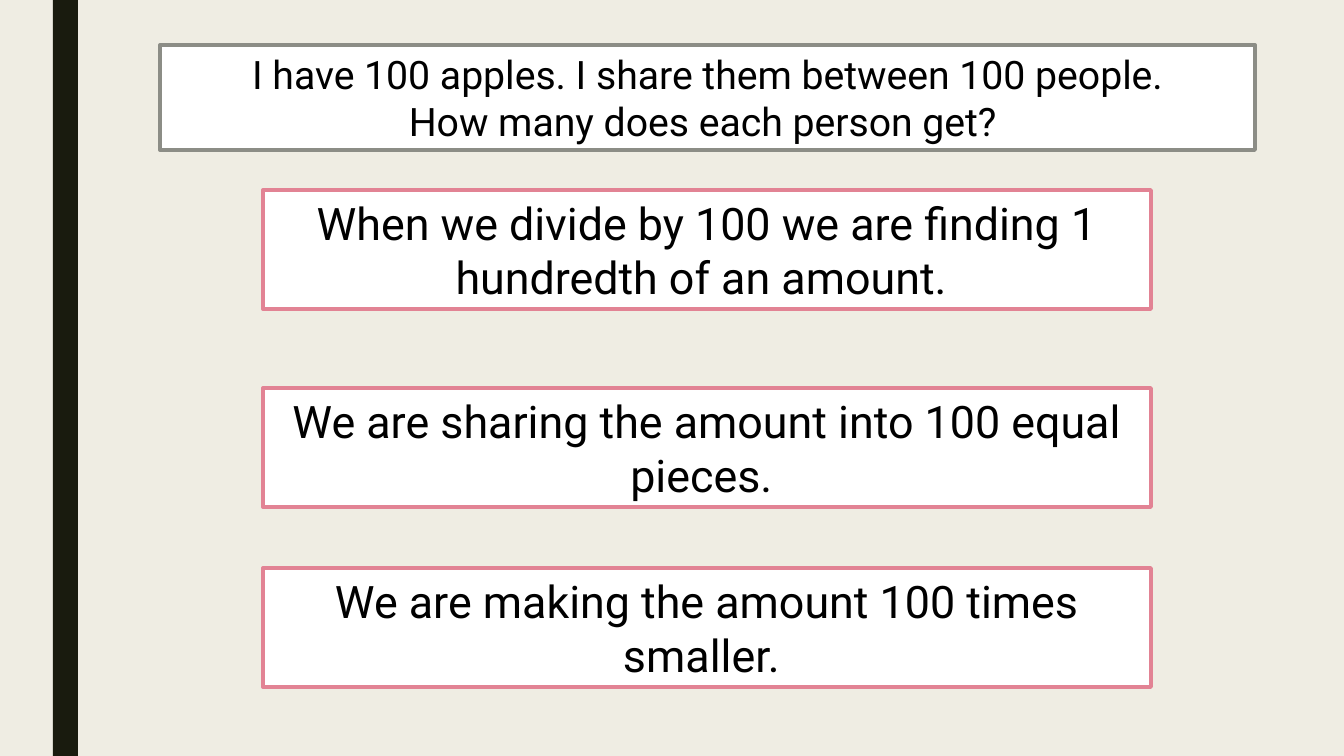
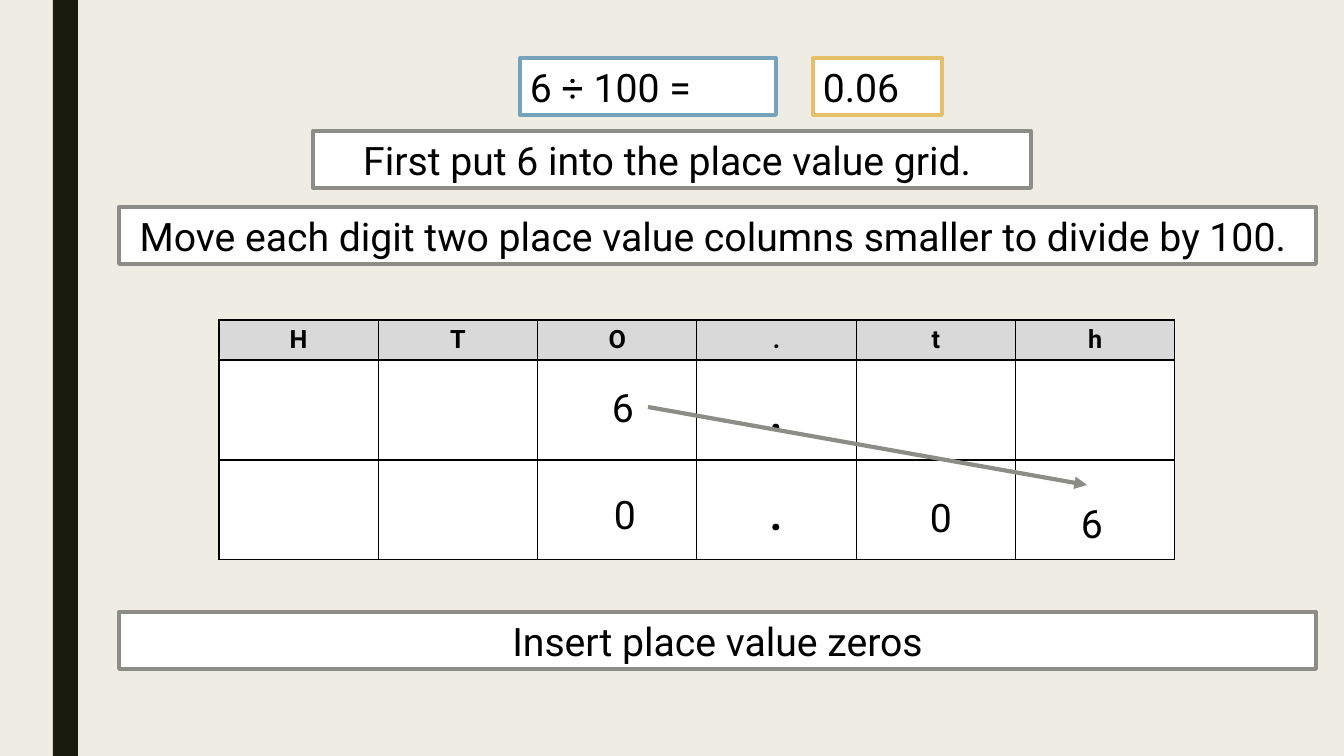
from lxml import etree
from pptx import Presentation
from pptx.dml.color import RGBColor
from pptx.enum.shapes import MSO_CONNECTOR, MSO_SHAPE
from pptx.enum.text import MSO_ANCHOR, PP_ALIGN
from pptx.oxml import parse_xml
from pptx.oxml.ns import nsdecls, qn
from pptx.util import Pt

PX = 914400 / 100.8
FONT = "Roboto"
RECTANGLE = MSO_SHAPE.RECTANGLE
STRAIGHT = MSO_CONNECTOR.STRAIGHT
MIDDLE, TOP = MSO_ANCHOR.MIDDLE, MSO_ANCHOR.TOP
LEFT, CENTER = PP_ALIGN.LEFT, PP_ALIGN.CENTER

CREAM = RGBColor(0xEF, 0xED, 0xE3)
DARK = RGBColor(0x19, 0x1B, 0x0E)
BLACK = RGBColor(0x00, 0x00, 0x00)
WHITE = RGBColor(0xFF, 0xFF, 0xFF)
HEADER_GRAY = RGBColor(0xD9, 0xD9, 0xD9)
GRAY = RGBColor(0x8C, 0x8D, 0x86)
PINK = RGBColor(0xE2, 0x83, 0x94)
BLUE = RGBColor(0x77, 0xA2, 0xBB)
GOLD = RGBColor(0xE6, 0xC0, 0x69)


def write_text(frame, text, size=28, bold=False, align=CENTER):
    """Fill a text frame, one paragraph for each line of text."""
    frame.word_wrap = True
    for number, line in enumerate(text.split("\n")):
        para = frame.paragraphs[0] if number == 0 else frame.add_paragraph()
        para.alignment = align
        span = para.add_run()
        span.text = line
        span.font.name = FONT
        span.font.size = Pt(size)
        span.font.bold = bold
        span.font.color.rgb = BLACK


def add_box(page, bounds, fill, outline=None):
    """Add a flat rectangle; bounds are left, top, width, height in px."""
    box = page.shapes.add_shape(RECTANGLE, *(round(n * PX) for n in bounds))
    box.shadow.inherit = False
    box.fill.solid()
    box.fill.fore_color.rgb = fill
    if outline is None:
        box.line.fill.background()
    else:
        box.line.color.rgb = outline
        box.line.width = Pt(2.75)
    return box


deck = Presentation()
deck.slide_width, deck.slide_height = round(1344 * PX), round(756 * PX)
master = deck.slide_master
blank = deck.slide_layouts[6]
sharing = deck.slides.add_slide(blank)
grid_page = deck.slides.add_slide(blank)

# Shared background and side band, kept on the master
master.background.fill.solid()
master.background.fill.fore_color.rgb = CREAM
band = add_box(sharing, (53, 0, 25, 756), DARK)
master.shapes.element.append(band.element)

# Slide 1: what dividing by 100 means
question = add_box(sharing, (160, 45, 1095, 105), WHITE, GRAY)
write_text(question.text_frame, "I have 100 apples. I share them between 100 people.\n"
           "How many does each person get? ")
for top, statement in (
    (190, "When we divide by 100 we are finding 1 hundredth of an amount. "),
    (388, "We are sharing the amount into 100 equal pieces. "),
    (568, "We are making the amount 100 times smaller. "),
):
    box = add_box(sharing, (263, top, 888, 119), WHITE, PINK)
    write_text(box.text_frame, statement, size=32)

# Slide 2: calculation, answer and steps
for left, top, width, outline, align, text in (
    (520, 58, 256, BLUE, LEFT, "6 ÷ 100 ="),
    (813, 58, 129, GOLD, LEFT, "0.06"),
    (313, 131, 718, GRAY, CENTER, "First put 6 into the place value grid. "),
    (119, 207, 1197, GRAY, CENTER,
     "Move each digit two place value columns smaller to divide by 100. "),
    (119, 612, 1197, GRAY, CENTER, "Insert place value zeros"),
):
    box = add_box(grid_page, (left, top, width, 57), WHITE, outline)
    write_text(box.text_frame, text, align=align)

# Place value grid
HEADINGS = ["H", "T", "O", ".", "t", "h"]
POINT_ROW = ["", "", "", ".", "", ""]
rows = [HEADINGS, POINT_ROW, POINT_ROW]
grid = grid_page.shapes.add_table(
    len(rows), len(HEADINGS),
    round(219 * PX), round(320 * PX), round(956 * PX), round(240 * PX)).table
grid.first_row = grid.horz_banding = False
for row, height in zip(grid.rows, (40, 100, 100)):
    row.height = round(height * PX)
for row_number, texts in enumerate(rows):
    header = row_number == 0
    for column_number, text in enumerate(texts):
        cell = grid.cell(row_number, column_number)
        cell.vertical_anchor = TOP if header else MIDDLE
        if text:
            write_text(cell.text_frame, text, size=18 if header else 44, bold=header)
        properties = cell._tc.get_or_add_tcPr()
        for side in ("lnL", "lnR", "lnT", "lnB"):
            properties.append(parse_xml(
                f'<a:{side} {nsdecls("a")} w="12700"><a:solidFill>'
                f'<a:srgbClr val="{BLACK}"/></a:solidFill></a:{side}>'))
        cell.fill.solid()
        cell.fill.fore_color.rgb = HEADER_GRAY if header else WHITE

# Digits placed over the grid
for left, top, digit in ((562, 378, "6"), (1031, 494, "6"),
                         (880, 488, "0"), (564, 485, "0")):
    label = grid_page.shapes.add_textbox(
        *(round(n * PX) for n in (left, top, 122, 57)))
    write_text(label.text_frame, digit)

# Arrow from the ones to the hundredths
arrow = grid_page.shapes.add_connector(
    STRAIGHT, *(round(n * PX) for n in (648, 407, 1087, 485)))
arrow.line.color.rgb = GRAY
arrow.line.width = Pt(3)
etree.SubElement(arrow.line._get_or_add_ln(), qn("a:tailEnd"), type="triangle")
etree.SubElement(arrow.element.spPr, qn("a:effectLst"))

deck.save("out.pptx")
